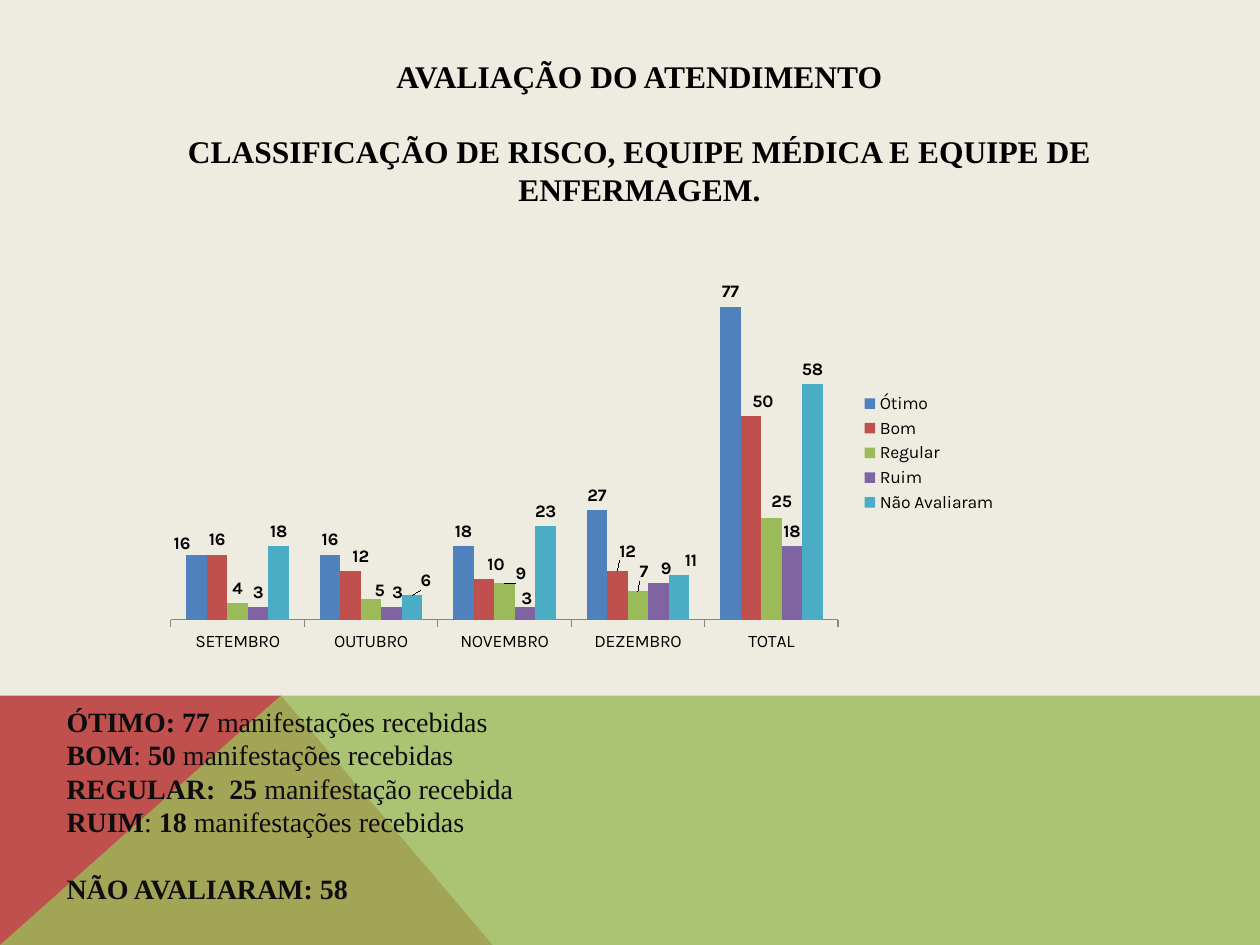
import pptx
import pptx.chart.data
import pptx.dml.color
import pptx.enum.chart
import pptx.enum.text
import pptx.oxml
import pptx.oxml.ns
import pptx.util
from pptx.util import Inches

COLORS = {
    "background": "EEECE1", "red": "C0504D", "green": "9BBB59",
    "title": "000000", "body": "0D0D0D", "axis": "868686",
}
TEXT_FONT = "Times New Roman"
CHART_FONT = "Karla"
MONTHS = ["SETEMBRO", "OUTUBRO", "NOVEMBRO", "DEZEMBRO", "TOTAL"]

# Rating: colour, values, and label shifts {category: (x, y)} in chart fractions
RATINGS = {
    "Ótimo": ("4F81BD", [16, 16, 18, 27, 77], {0: (-0.017, 0.01)}),
    "Bom": ("C0504D", [16, 12, 10, 12, 50],
            {1: (0.012, 0), 2: (0.014, 0), 3: (0.012, -0.012), 4: (0.014, 0)}),
    "Regular": ("9BBB59", [4, 5, 9, 7, 25],
                {1: (0.01, 0.014), 2: (0.019, 0.012), 3: (0.007, -0.012), 4: (0.012, -0.005)}),
    "Ruim": ("8064A2", [3, 3, 3, 9, 18],
             {1: (0.007, 0), 2: (0.002, 0.014), 3: (0.009, 0)}),
    "Não Avaliaram": ("4BACC6", [18, 6, 23, 11, 58], {1: (0.016, 0), 3: (0.014, 0)}),
}

# Each line is a list of (text, bold)
SUMMARY = [
    [("ÓTIMO: 77 ", True), ("manifestações recebidas", False)],
    [("BOM", True), (": ", False), ("50 ", True), ("manifestações recebidas", False)],
    [("REGULAR:  25 ", True), ("manifestação recebida", False)],
    [("RUIM", True), (": ", False), ("18 ", True), ("manifestações recebidas", False)],
    [("NÃO AVALIARAM: 58", True)],
]
TITLE = [
    [("AVALIAÇÃO DO ATENDIMENTO", True)],
    [("CLASSIFICAÇÃO DE RISCO, EQUIPE MÉDICA E EQUIPE DE ENFERMAGEM.", True)],
]


def rgb(value):
    return pptx.dml.color.RGBColor.from_string(value)


def fill_solid(fill, value):
    fill.solid()
    fill.fore_color.rgb = rgb(value)


def add_polygon(slide, points, color, opacity=100):
    corners = [(Inches(x), Inches(y)) for x, y in points]
    builder = slide.shapes.build_freeform(*corners[0])
    builder.add_line_segments(corners[1:], close=True)
    polygon = builder.convert_to_shape()
    polygon.shadow.inherit = False
    polygon.line.fill.background()
    fill_solid(polygon.fill, color)
    if opacity < 100:
        tint = polygon.fill._xPr.find(".//" + pptx.oxml.ns.qn("a:srgbClr"))
        tint.append(pptx.oxml.parse_xml(
            f'<a:alpha {pptx.oxml.ns.nsdecls("a")} val="{opacity * 1000}"/>'))


def add_text(slide, box, lines, size, color, align, anchor):
    """Add a text box whose last paragraph stands one line apart."""
    frame = slide.shapes.add_textbox(*map(Inches, box)).text_frame
    frame.word_wrap = True
    frame.vertical_anchor = anchor
    for index, line in enumerate(lines):
        paragraph = frame.paragraphs[0] if index == 0 else frame.add_paragraph()
        paragraph.alignment = align
        for text, bold in line:
            run = paragraph.add_run()
            run.text = text
            run.font.name = TEXT_FONT
            run.font.size = pptx.util.Pt(size)
            run.font.bold = bold
            run.font.color.rgb = rgb(color)
    paragraph.space_before = pptx.util.Pt(size * 1.17)


def manual_layout(x, y, extra=""):
    return pptx.oxml.parse_xml(
        f'<c:layout {pptx.oxml.ns.nsdecls("c")}><c:manualLayout>{extra}'
        f'<c:x val="{x}"/><c:y val="{y}"/></c:manualLayout></c:layout>')


def place_plot(chart, x, y, width, height):
    layout = manual_layout(
        x, y, '<c:layoutTarget val="inner"/><c:xMode val="edge"/><c:yMode val="edge"/>')
    for tag, value in (("w", width), ("h", height)):
        layout[0].append(pptx.oxml.parse_xml(
            f'<c:{tag} {pptx.oxml.ns.nsdecls("c")} val="{value}"/>'))
    plot_area = chart._chartSpace.chart.plotArea
    for old in plot_area.findall(pptx.oxml.ns.qn("c:layout")):
        plot_area.remove(old)
    plot_area.insert(0, layout)


def label_series(series, shifts):
    outside = pptx.enum.chart.XL_LABEL_POSITION.OUTSIDE_END
    labels = series.data_labels
    labels.show_value = True
    labels.position = outside
    labels.font.bold = True
    labels.font.size = pptx.util.Pt(10)
    for index, shift in shifts.items():
        label = series.points[index].data_label
        label.font.bold = True
        label.font.size = pptx.util.Pt(10)
        label.position = outside
        node = labels._element.xpath(f'c:dLbl[c:idx/@val="{index}"]')[0]
        node.insert(1, manual_layout(*shift))


def add_ratings_chart(slide, box):
    data = pptx.chart.data.CategoryChartData()
    data.categories = MONTHS
    for name, (_, values, _) in RATINGS.items():
        data.add_series(name, values)
    chart = slide.shapes.add_chart(
        pptx.enum.chart.XL_CHART_TYPE.COLUMN_CLUSTERED, *map(Inches, box), data).chart
    chart.has_title = False
    chart.font.name = CHART_FONT
    chart.font.size = pptx.util.Pt(10)
    chart.font.color.rgb = rgb(COLORS["title"])

    # Axes and legend
    chart.value_axis.visible = False
    chart.value_axis.has_major_gridlines = False
    chart.value_axis.minimum_scale = 0
    chart.value_axis.maximum_scale = 80
    chart.category_axis.major_tick_mark = pptx.enum.chart.XL_TICK_MARK.OUTSIDE
    chart.category_axis.format.line.color.rgb = rgb(COLORS["axis"])
    chart.has_legend = True
    chart.legend.position = pptx.enum.chart.XL_LEGEND_POSITION.RIGHT
    chart.legend.include_in_layout = False
    place_plot(chart, 0.02, 0.12, 0.78, 0.78)

    # Columns
    plot = chart.plots[0]
    plot.gap_width = 150
    plot.overlap = 0
    plot.vary_by_categories = False
    for series, (color, _, shifts) in zip(plot.series, RATINGS.values()):
        fill_solid(series.format.fill, color)
        series.invert_if_negative = False
        label_series(series, shifts)


def main():
    deck = pptx.Presentation()
    deck.slide_width, deck.slide_height = Inches(10), Inches(7.5)
    slide = deck.slides.add_slide(deck.slide_layouts[6])
    fill_solid(slide.background.fill, COLORS["background"])

    # Footer bands
    add_polygon(slide, [(0, 7.5), (0, 5.52), (2.23, 5.52), (3.91, 7.5)], COLORS["red"])
    add_polygon(slide, [(0, 7.5), (2.23, 5.52), (10, 5.52), (10, 7.5)], COLORS["green"], 80)

    # Title and summary
    align, anchor = pptx.enum.text.PP_ALIGN, pptx.enum.text.MSO_ANCHOR
    add_text(slide, (0.62, 0.4, 8.91, 1.3), TITLE, 18, COLORS["title"],
             align.CENTER, anchor.MIDDLE)
    add_text(slide, (0.43, 5.54, 5.91, 2.56), SUMMARY, 16, COLORS["body"],
             align.LEFT, anchor.TOP)

    # Ratings by month
    add_ratings_chart(slide, (1.22, 1.94, 6.79, 3.31))
    deck.save("out.pptx")


if __name__ == "__main__":
    main()
